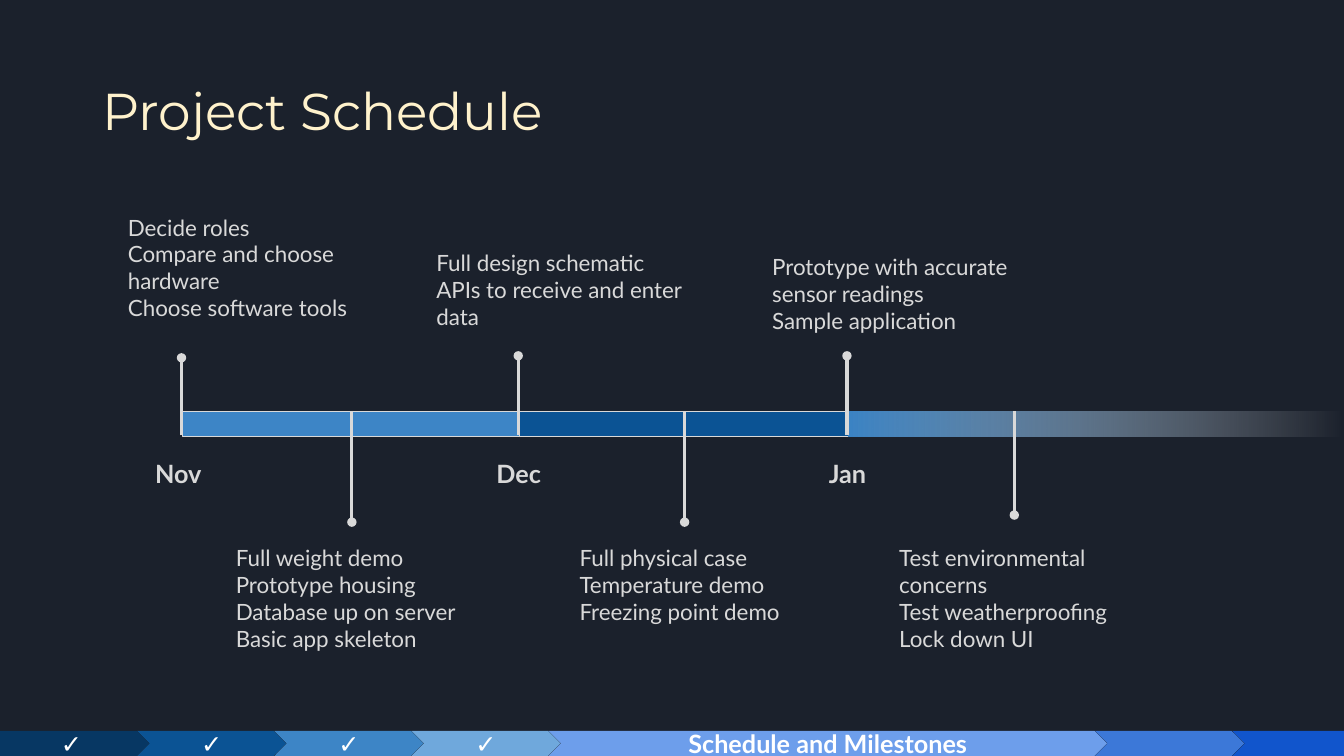
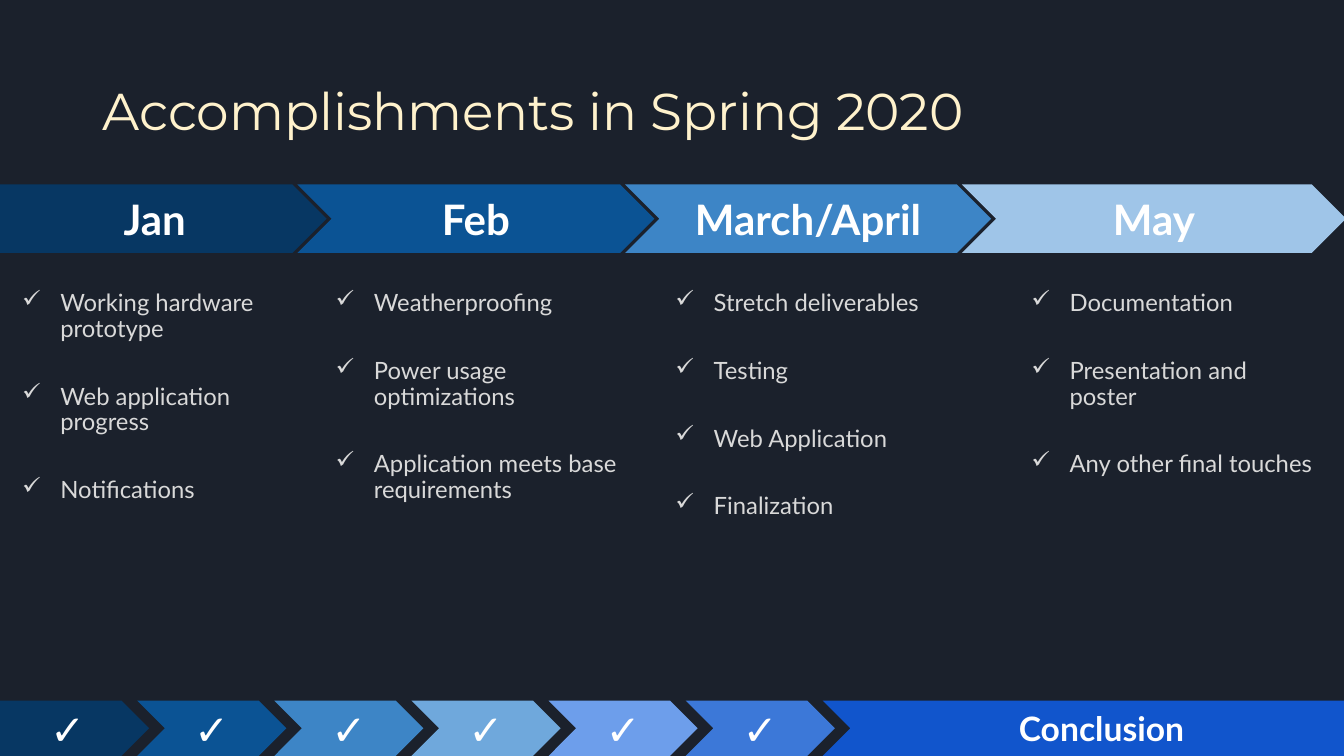
from pptx import Presentation
from pptx import util as u
from pptx.dml.color import RGBColor
from pptx.enum import shapes, text
from pptx.oxml import ns
from lxml import etree

PX = 9144  # 100 px to the inch
HUE = {
    "back": "1B212C", "title": "FFF2CC", "body": "D9D9D9", "white": "FFFFFF",
    "navy": "073763", "deep": "0B5394", "blue": "3D85C6", "sky": "6FA8DC",
    "peri": "6D9EEB", "royal": "3C78D8", "vivid": "1155CC", "pale": "9FC5E8",
}
MAIN, HEAD = "Lato", "Montserrat"
KIND = shapes.MSO_SHAPE
LEFT, MID = text.PP_ALIGN.LEFT, text.PP_ALIGN.CENTER
TRAIL = ["navy", "deep", "blue", "sky", "peri", "royal", "vivid"]
STEP, LAP = 148, 12  # width and overlap of the footer arrows


def rgb(hue):
    return RGBColor.from_string(HUE[hue])


def px(*vals):
    return [u.Emu(v * PX) for v in vals]


def sub(node, tag, **attrs):
    return etree.SubElement(node, ns.qn(tag), attrs)


def write(frame, words, size, hue, bold=False, align=LEFT, font=MAIN, pad=10):
    """Fill a text frame and format every run the same way."""
    frame.word_wrap = True
    frame.margin_left = frame.margin_right = u.Emu(10 * PX)
    frame.margin_top = frame.margin_bottom = u.Emu(pad * PX)
    frame.text = words
    for para in frame.paragraphs:
        para.alignment = align
        for run in para.runs:
            run.font.size, run.font.name = u.Pt(size), font
            run.font.bold = bold
            run.font.color.rgb = rgb(hue)


def label(slide, box, words, size=16, hue="body", **style):
    frame = slide.shapes.add_textbox(*px(*box)).text_frame
    write(frame, words, size, hue, **style)
    return frame


def title(slide, words):
    frame = label(slide, (92, 40, 1150, 145), words, 37, "title", font=HEAD, pad=5)
    frame.vertical_anchor = text.MSO_ANCHOR.MIDDLE
    frame.paragraphs[0].line_spacing = 0.9


def block(slide, kind, box, hue, edge=None):
    shape = slide.shapes.add_shape(kind, *px(*box))
    shape.shadow.inherit = False
    shape.fill.solid()
    shape.fill.fore_color.rgb = rgb(hue)
    if edge:
        shape.line.color.rgb = rgb(edge)
        shape.line.width = u.Pt(0.75)
    else:
        shape.line.fill.background()
    return shape


def arrows(slide, top, high, lap, steps):
    """Lay (width, hue, words, size) arrows end to end with a fixed overlap."""
    left = 0
    for wide, hue, words, size in steps:
        kind = KIND.CHEVRON if left else KIND.PENTAGON
        shape = block(slide, kind, (left, top, wide, high), hue)
        if words:
            write(shape.text_frame, words, size, "white", bold=True, align=MID)
            shape.text_frame.vertical_anchor = text.MSO_ANCHOR.MIDDLE
        left += wide - lap


def trail(slide, top, now, words, wide, tick, size):
    """Footer progress: ticks before the current step, blanks after it."""
    steps = []
    for i, hue in enumerate(TRAIL):
        if i == now:
            steps.append((wide, hue, words, size))
        else:
            steps.append((STEP, hue, "✓" if i < now else "", tick))
    arrows(slide, top, 750 - top, LAP, steps)


def pin(slide, x, start, end, bar=None):
    """Round-headed marker, joined to the top of a bar if one is given."""
    line = slide.shapes.add_connector(
        shapes.MSO_CONNECTOR.STRAIGHT, *px(x, start, x, end))
    if bar is not None:
        line.begin_connect(bar, 0)
    line.line.color.rgb = rgb("body")
    line.line.width = u.Pt(2.25)
    sub(line.line._get_or_add_ln(), "a:tailEnd", type="oval")
    sub(line._element.spPr, "a:effectLst")


def fade(shape, hue):
    """Blend from a colour on the left to clear white on the right."""
    shape.fill.gradient()
    shape.fill.gradient_angle = 0
    for stop, name in zip(shape.fill.gradient_stops, (hue, "white")):
        stop.color.rgb = rgb(name)
    last = list(shape._element.spPr.iter(ns.qn("a:srgbClr")))[-1]
    sub(last, "a:alpha", val="0")


def ticks(slide, left, wide, items):
    frame = label(slide, (left, 284, wide, 391), "\n".join(items), 17, pad=5)
    for i, para in enumerate(frame.paragraphs):
        para.line_spacing = 0.9
        para.space_before = u.Pt(30 if i else 10)
        props = para._p.get_or_add_pPr()
        props.set("marL", str(50 * PX))
        props.set("indent", str(-38 * PX))
        sub(sub(props, "a:buClr"), "a:srgbClr", val=HUE["body"])
        sub(props, "a:buChar", char="✓")


def plan(slide):
    title(slide, "Project Schedule")
    # Time bar
    nov, dec, jan = [
        block(slide, KIND.RECTANGLE, (x, 408, wide, 25), hue, edge)
        for x, wide, hue, edge in [(181, 336, "blue", "body"),
                                   (515, 328, "deep", "body"),
                                   (842, 491, "blue", None)]]
    fade(jan, "blue")
    # Months and the pins above them
    for x, tip, left, name, align in [(180, 355, 144, "Nov", LEFT),
                                      (514, 353, 477, "Dec", MID),
                                      (840, 353, 803, "Jan", MID)]:
        pin(slide, x, 432, tip)
        label(slide, (left, 445, 75, 51), name, 18, bold=True, align=align)
    # Mid-month pins
    for x, tip, bar in [(349, 518, nov), (679, 518, dec), (1006, 511, None)]:
        pin(slide, x, 408, tip, bar)
    # Goals
    for box, lines in [
        ((117, 202, 251, 123), ["Decide roles", "Compare and choose hardware",
                                "Choose software tools"]),
        ((423, 237, 277, 89), ["Full design schematic",
                               "APIs to receive and enter data"]),
        ((756, 241, 301, 89), ["Prototype with accurate sensor readings",
                               "Sample application"]),
        ((224, 530, 251, 123), ["Full weight demo", "Prototype housing",
                                "Database up on server", "Basic app skeleton"]),
        ((565, 530, 226, 123), ["Full physical case", "Temperature demo",
                                "Freezing point demo"]),
        ((882, 530, 251, 123), ["Test environmental concerns",
                                "Test weatherproofing", "Lock down UI"]),
    ]:
        label(slide, box, "\n".join(lines))
    trail(slide, 725, 4, "Schedule and Milestones", 554, 18, 18)


def spring(slide):
    title(slide, "Accomplishments in Spring 2020")
    # Month arrows
    arrows(slide, 183, 68, 29, [
        (324, "navy", "Jan", 30), (354, "deep", "Feb", 30),
        (363, "blue", "March/April", 30), (381, "pale", "May", 30)])
    # Checklists
    for left, wide, items in [
        (0, 298, ["Working hardware prototype", "Web application progress",
                  "Notifications"]),
        (311, 324, ["Weatherproofing", "Power usage optimizations",
                    "Application meets base requirements"]),
        (648, 339, ["Stretch deliverables", "Testing", "Web Application",
                    "Finalization"]),
        (1001, 311, ["Documentation", "Presentation and poster",
                     "Any other final touches"]),
    ]:
        ticks(slide, left, wide, items)
    trail(slide, 695, 6, "Conclusion", 553, 30, 24)


def main():
    deck = Presentation()
    deck.slide_width, deck.slide_height = u.Inches(13.33), u.Inches(7.5)
    back = deck.slide_master.background.fill
    back.solid()
    back.fore_color.rgb = rgb("back")
    for draw in (plan, spring):
        draw(deck.slides.add_slide(deck.slide_layouts[6]))
    deck.save("out.pptx")


if __name__ == "__main__":
    main()
